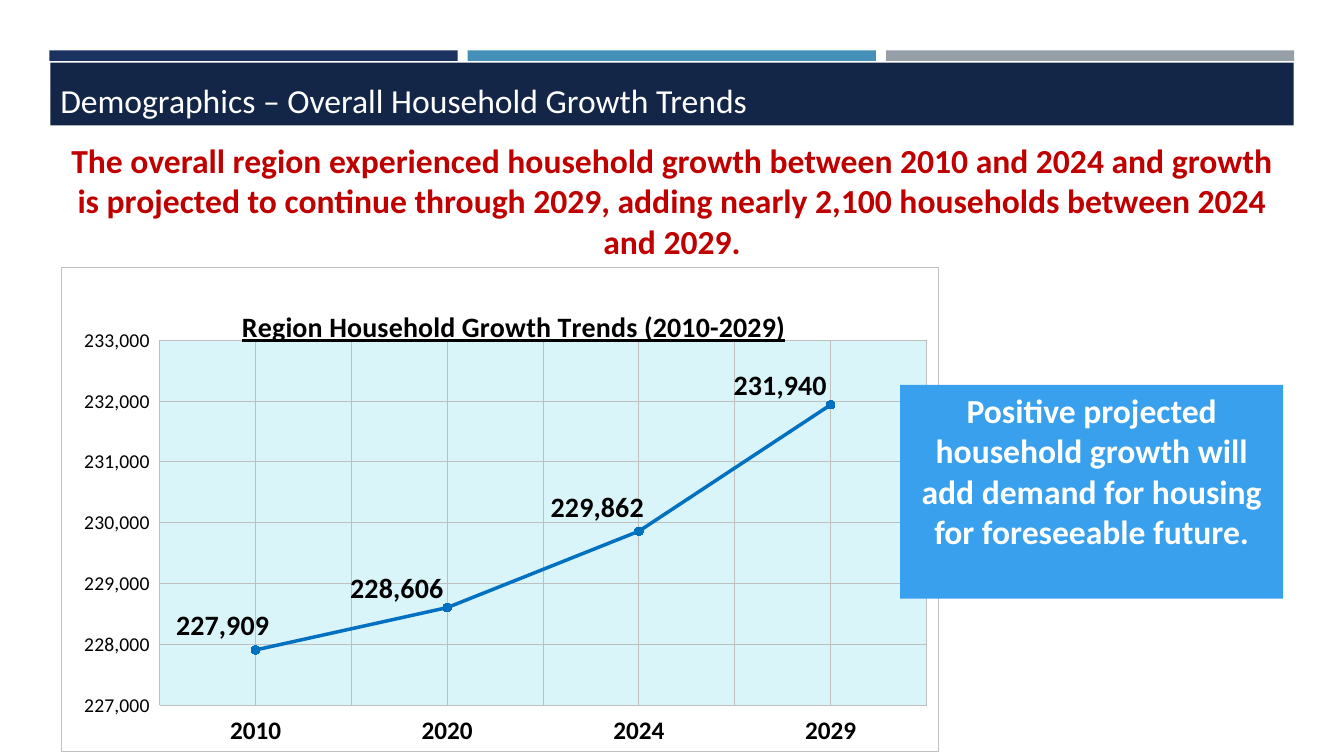
from copy import deepcopy

from lxml import etree
from pptx import Presentation
from pptx import util as u
from pptx.chart.data import CategoryChartData
from pptx.dml.color import RGBColor
from pptx.enum import chart as charts, shapes, text
from pptx.oxml import parse_xml
from pptx.oxml.ns import nsdecls, qn

Pt = u.Pt
FONT = "Calibri"
GRID = "BFBFBF"
LINE = "0070C0"
HOUSEHOLDS = {"2010": 227909, "2020": 228606, "2024": 229862, "2029": 231940}
LABEL_OFFSETS = [(-0.1, -0.05), (-0.12, -0.04), (-0.11, -0.05), (-0.12, -0.04)]


def color(value):
    """Turn a hex string into a colour."""
    return RGBColor.from_string(value)


def set_font(font, size, fill="000000", bold=False, underline=False):
    """Format a font."""
    font.name, font.size, font.bold, font.underline = FONT, Pt(size), bold, underline
    font.color.rgb = color(fill)


def write(frame, content, anchor=text.MSO_ANCHOR.TOP, align=text.PP_ALIGN.CENTER,
          spacing=None, **font):
    """Write one formatted paragraph into a text frame."""
    frame.word_wrap = True
    frame.vertical_anchor = anchor
    paragraph = frame.paragraphs[0]
    paragraph.alignment = align
    paragraph.line_spacing = spacing
    run = paragraph.add_run()
    run.text = content
    set_font(run.font, **font)


def add_rectangle(slide, left, top, width, height, fill):
    """Add a plain filled rectangle."""
    shape = slide.shapes.add_shape(shapes.MSO_SHAPE.RECTANGLE,
                                   Pt(left), Pt(top), Pt(width), Pt(height))
    shape.shadow.inherit = False
    shape.fill.solid()
    shape.fill.fore_color.rgb = color(fill)
    shape.line.fill.background()
    return shape


def set_layout(parent, index, x, y, width=None, height=None, inner=False, edge=True):
    """Give a chart element a manual layout at the given child index."""
    for layout in parent.findall(qn("c:layout")):
        parent.remove(layout)
    layout = parse_xml(f"<c:layout {nsdecls('c')}><c:manualLayout/></c:layout>")
    values = {"layoutTarget": "inner" if inner else None,
              "xMode": "edge" if edge else None, "yMode": "edge" if edge else None,
              "x": x, "y": y, "w": width, "h": height}
    for tag, value in values.items():
        if value is not None:
            etree.SubElement(layout[0], qn(f"c:{tag}")).set("val", str(value))
    parent.insert(index, layout)


def set_area(parent, anchor, fill, border=None):
    """Fill a chart area, placing its properties next to the anchor element."""
    line = f'<a:ln w="{Pt(0.75)}"><a:solidFill><a:srgbClr val="{border}"/></a:solidFill></a:ln>'
    properties = parse_xml(
        f'<c:spPr {nsdecls("c", "a")}><a:solidFill><a:srgbClr val="{fill}"/></a:solidFill>'
        f'{line if border else "<a:ln><a:noFill/></a:ln>"}</c:spPr>')
    if anchor is None:
        parent.append(properties)
    else:
        anchor.addnext(properties)


def format_axis(axis, size, bold=False):
    """Format an axis with its gridlines."""
    axis.has_major_gridlines = True
    axis.major_gridlines.format.line.color.rgb = color(GRID)
    axis.major_gridlines.format.line.width = Pt(0.75)
    axis.major_tick_mark = charts.XL_TICK_MARK.OUTSIDE
    axis.format.line.fill.background()
    set_font(axis.tick_labels.font, size, bold=bold)


def add_minor_gridlines(axis):
    """Add minor gridlines that look like the major ones."""
    axis.has_minor_gridlines = True
    major = axis._element.find(qn("c:majorGridlines"))
    minor = axis._element.find(qn("c:minorGridlines"))
    minor.append(deepcopy(major.find(qn("c:spPr"))))


def format_series(series):
    """Format the line, its markers and its value labels."""
    series.smooth = False
    series.format.line.color.rgb = color(LINE)
    series.format.line.width = Pt(2.5)
    series.marker.style = charts.XL_MARKER_STYLE.CIRCLE
    series.marker.size = 6
    series.marker.format.fill.solid()
    series.marker.format.fill.fore_color.rgb = color(LINE)
    series.marker.format.line.color.rgb = color(LINE)
    labels = series.data_labels
    labels.show_value = True
    labels.position = charts.XL_LABEL_POSITION.RIGHT
    set_font(labels.font, 20, bold=True)
    for index in range(len(LABEL_OFFSETS)):
        label = series.points[index].data_label
        set_font(label.font, 20, bold=True)
        label.position = charts.XL_LABEL_POSITION.RIGHT
    for element, offset in zip(labels._element.findall(qn("c:dLbl")), LABEL_OFFSETS):
        set_layout(element, 1, *offset, edge=False)


def add_household_chart(slide):
    """Add the household trend chart."""
    data = CategoryChartData(number_format="#,##0")
    data.categories = list(HOUSEHOLDS)
    data.add_series("Series 1", list(HOUSEHOLDS.values()))
    chart = slide.shapes.add_chart(charts.XL_CHART_TYPE.LINE_MARKERS, Pt(43.5), Pt(191),
                                   Pt(627.5), Pt(346), data).chart
    chart.has_legend = False
    chart.plots[0].vary_by_categories = False
    chart.font.name, chart.font.size = "Times New Roman", Pt(10)
    chart.font.color.rgb = color("3B3B3B")

    chart.has_title = True
    write(chart.chart_title.text_frame, "Region Household Growth Trends (2010-2029)",
          size=20, bold=True, underline=True)
    set_layout(chart.chart_title._element, 1, 0.2, 0.07)

    format_axis(chart.category_axis, 18, bold=True)
    add_minor_gridlines(chart.category_axis)
    chart.category_axis.tick_label_position = charts.XL_TICK_LABEL_POSITION.LOW
    values = chart.value_axis
    format_axis(values, 14)
    values.minimum_scale, values.maximum_scale, values.major_unit = 227000, 233000, 1000
    values.tick_labels.number_format = "#,##0"
    values.tick_labels.number_format_is_linked = False
    format_series(chart.plots[0].series[0])

    space = chart._chartSpace
    plot_area = space.chart.plotArea
    set_layout(plot_area, 0, 0.112, 0.15, 0.874, 0.755, inner=True)
    set_area(plot_area, None, "DAF5FA")
    set_area(space, space.chart, "FFFFFF", GRID)


def main():
    """Build the slide and save it."""
    presentation = Presentation()
    presentation.slide_width, presentation.slide_height = Pt(960), Pt(540)
    slide = presentation.slides.add_slide(presentation.slide_layouts[6])

    for index, fill in enumerate(("1A3260", "4590B8", "969FA7")):
        add_rectangle(slide, 35.3 + 298.8 * index, 36, 291.6, 7.5, fill)
    add_household_chart(slide)

    header = add_rectangle(slide, 36, 44.8, 888, 44.8, "142648")
    write(header.text_frame, "Demographics – Overall Household Growth Trends",
          anchor=text.MSO_ANCHOR.BOTTOM, align=text.PP_ALIGN.LEFT, spacing=0.85,
          size=24, fill="FFFFFF")

    summary = slide.shapes.add_textbox(Pt(36), Pt(96.5), Pt(888), Pt(94.5))
    write(summary.text_frame,
          "The overall region experienced household growth between 2010 and 2024 and growth "
          "is projected to continue through 2029, adding nearly 2,100 households between "
          "2024 and 2029.", size=24, fill="C00000", bold=True)

    callout = add_rectangle(slide, 643, 275, 273.6, 152.6, "39A0ED")
    write(callout.text_frame,
          "Positive projected household growth will add demand for housing "
          "for foreseeable future.", size=24, fill="FFFFFF", bold=True)

    presentation.save("out.pptx")


if __name__ == "__main__":
    main()
